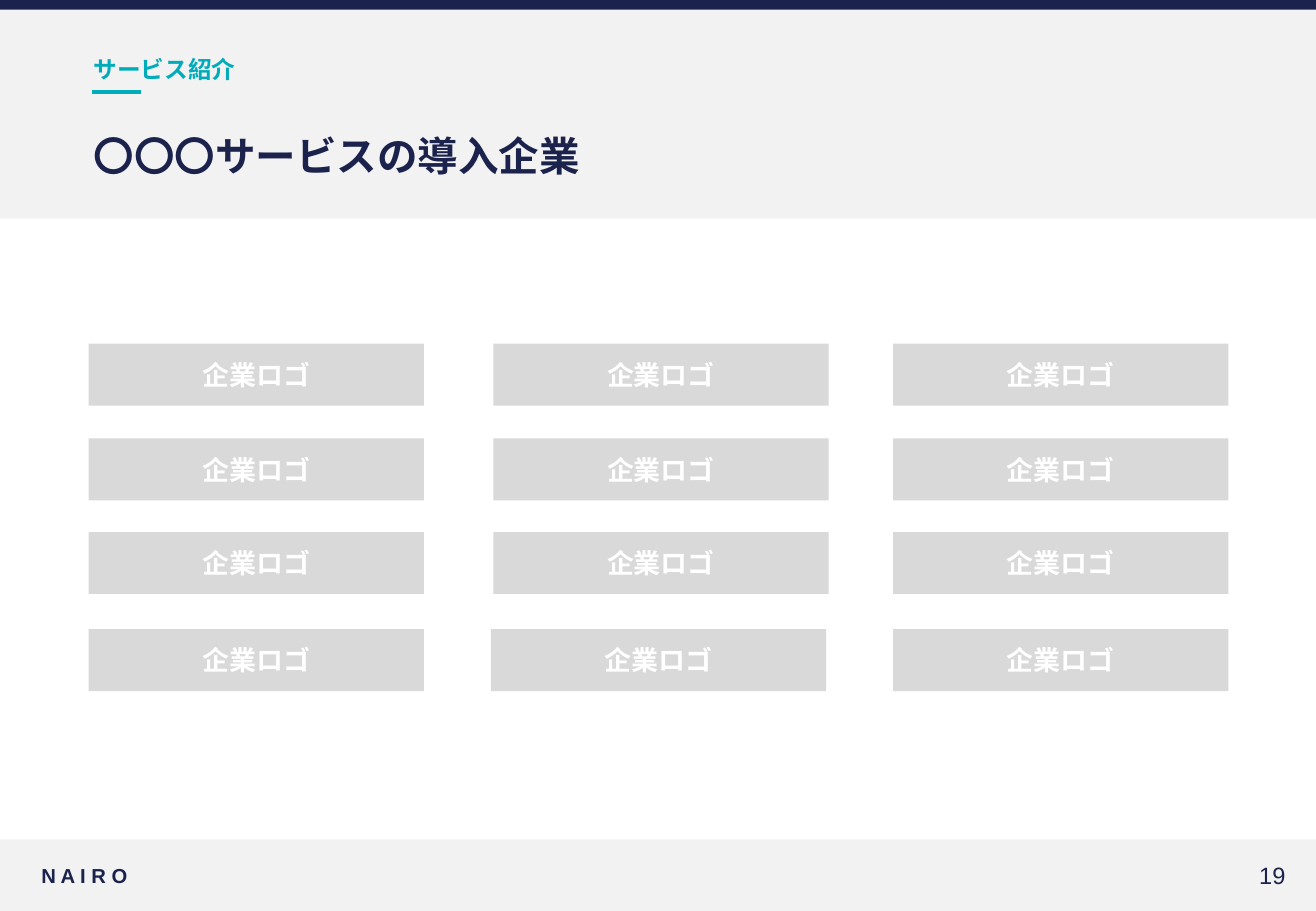
from dataclasses import dataclass

import lxml.etree
import pptx
import pptx.dml.color
import pptx.enum.shapes
import pptx.enum.text
import pptx.oxml.ns
import pptx.shapes.base
import pptx.slide
import pptx.util

NAVY = pptx.dml.color.RGBColor(0x1B, 0x22, 0x4C)
TEAL = pptx.dml.color.RGBColor(0x00, 0xAC, 0xBA)
PALE_GREY = pptx.dml.color.RGBColor(0xF2, 0xF2, 0xF2)
LOGO_GREY = pptx.dml.color.RGBColor(0xD9, 0xD9, 0xD9)
WHITE = pptx.dml.color.RGBColor(0xFF, 0xFF, 0xFF)

JAPANESE_FONT = "Noto Sans CJK JP"
LATIN_FONT = "Arial"
ALIGN = pptx.enum.text.PP_ALIGN
ANCHOR = pptx.enum.text.MSO_ANCHOR

# The slide grid has one-inch columns and rows
CELL = pptx.util.Inches(1)
SLIDE_COLUMNS, SLIDE_ROWS = 10.83, 7.5
MARGIN = 0.73
CONTENT_COLUMNS = 9.37
TEXT_INSET = 0.04

# Logo grid: the middle column sits slightly left in the last row
LOGO_ROWS = (2.83, 3.61, 4.38, 5.18)
LOGO_COLUMNS = (MARGIN, 4.06, 7.35)
LAST_LOGO_COLUMNS = (MARGIN, 4.04, 7.35)


@dataclass(frozen=True)
class Box:
    column: float
    row: float
    columns: float
    rows: float

    def place(self) -> tuple[int, int, int, int]:
        return (grid(self.column), grid(self.row), grid(self.columns), grid(self.rows))


@dataclass(frozen=True)
class Band:
    box: Box
    color: pptx.dml.color.RGBColor


BANDS = (
    Band(Box(0, 6.91, SLIDE_COLUMNS, 0.59), PALE_GREY),
    Band(Box(0, 0, SLIDE_COLUMNS, 1.8), PALE_GREY),
    Band(Box(0, 0, SLIDE_COLUMNS, 0.08), NAVY),
)


def grid(cells: float) -> int:
    return round(cells * CELL)


def write_text(shape: pptx.shapes.base.BaseShape, text: str, *, size: float,
               color: pptx.dml.color.RGBColor, font: str = JAPANESE_FONT,
               bold: bool = True, align: ALIGN = ALIGN.LEFT,
               anchor: ANCHOR = ANCHOR.MIDDLE) -> None:
    frame = shape.text_frame
    frame.word_wrap = True
    frame.auto_size = pptx.enum.text.MSO_AUTO_SIZE.NONE
    frame.vertical_anchor = anchor
    frame.margin_left = frame.margin_right = grid(TEXT_INSET)
    frame.margin_top = frame.margin_bottom = grid(TEXT_INSET)
    paragraph = frame.paragraphs[0]
    paragraph.alignment = align
    run = paragraph.add_run()
    run.text = text
    run.font.size = pptx.util.Pt(size)
    run.font.bold = bold
    run.font.color.rgb = color
    run.font.name = font
    east_asian = lxml.etree.SubElement(run.font._element, pptx.oxml.ns.qn("a:ea"))
    east_asian.set("typeface", font)


def add_rectangle(slide: pptx.slide.Slide, box: Box,
                  color: pptx.dml.color.RGBColor) -> pptx.shapes.base.BaseShape:
    shape = slide.shapes.add_shape(pptx.enum.shapes.MSO_SHAPE.RECTANGLE, *box.place())
    shape.shadow.inherit = False
    shape.fill.solid()
    shape.fill.fore_color.rgb = color
    shape.line.fill.background()
    return shape


def add_accent_line(slide: pptx.slide.Slide) -> None:
    line = slide.shapes.add_connector(
        pptx.enum.shapes.MSO_CONNECTOR.STRAIGHT,
        grid(0.76), grid(0.76), grid(1.16), grid(0.76))
    line.line.color.rgb = TEAL
    line.line.width = pptx.util.Pt(2.5)
    lxml.etree.SubElement(line._element.spPr, pptx.oxml.ns.qn("a:effectLst"))


def move_placeholder(slide: pptx.slide.Slide, index: int,
                     box: Box) -> pptx.shapes.base.BaseShape:
    placeholder = slide.placeholders[index]
    placeholder.left, placeholder.top, placeholder.width, placeholder.height = box.place()
    # Bring the text in front of the bands
    slide.shapes._spTree.append(placeholder._element)
    return placeholder


def add_headings(slide: pptx.slide.Slide) -> None:
    section = move_placeholder(slide, 1, Box(MARGIN, 0.41, CONTENT_COLUMNS, 0.28))
    write_text(section, "サービス紹介", size=14, color=TEAL, anchor=ANCHOR.TOP)
    paragraph = section.text_frame.paragraphs[0]
    paragraph.space_before = pptx.util.Pt(0)
    properties = paragraph._p.get_or_add_pPr()
    properties.set("marL", "0")
    properties.set("indent", "0")
    lxml.etree.SubElement(properties, pptx.oxml.ns.qn("a:buNone"))

    title = move_placeholder(slide, 0, Box(MARGIN, 0.98, CONTENT_COLUMNS, 0.59))
    write_text(title, "〇〇〇サービスの導入企業", size=24, color=NAVY)


def add_logo_grid(slide: pptx.slide.Slide) -> None:
    for row in LOGO_ROWS:
        columns = LAST_LOGO_COLUMNS if row == LOGO_ROWS[-1] else LOGO_COLUMNS
        for column in columns:
            logo = add_rectangle(slide, Box(column, row, 2.76, 0.51), LOGO_GREY)
            write_text(logo, "企業ロゴ", size=16, color=WHITE, align=ALIGN.CENTER)


def add_footer(slide: pptx.slide.Slide) -> None:
    number = slide.shapes.add_textbox(*Box(9.55, 7.05, 1.07, 0.31).place())
    write_text(number, "19", size=14, color=NAVY, font=LATIN_FONT,
               bold=False, align=ALIGN.RIGHT)
    company = slide.shapes.add_textbox(*Box(0.3, 7.05, 1.07, 0.31).place())
    write_text(company, "N A I R O", size=12, color=NAVY, font=LATIN_FONT)


def main() -> None:
    presentation = pptx.Presentation()
    presentation.slide_width = grid(SLIDE_COLUMNS)
    presentation.slide_height = grid(SLIDE_ROWS)
    slide = presentation.slides.add_slide(presentation.slide_layouts[1])

    # Background bands and accent
    for band in BANDS:
        add_rectangle(slide, band.box, band.color)
    add_accent_line(slide)

    # Content
    add_headings(slide)
    add_logo_grid(slide)
    add_footer(slide)
    presentation.save("out.pptx")


if __name__ == "__main__":
    main()
